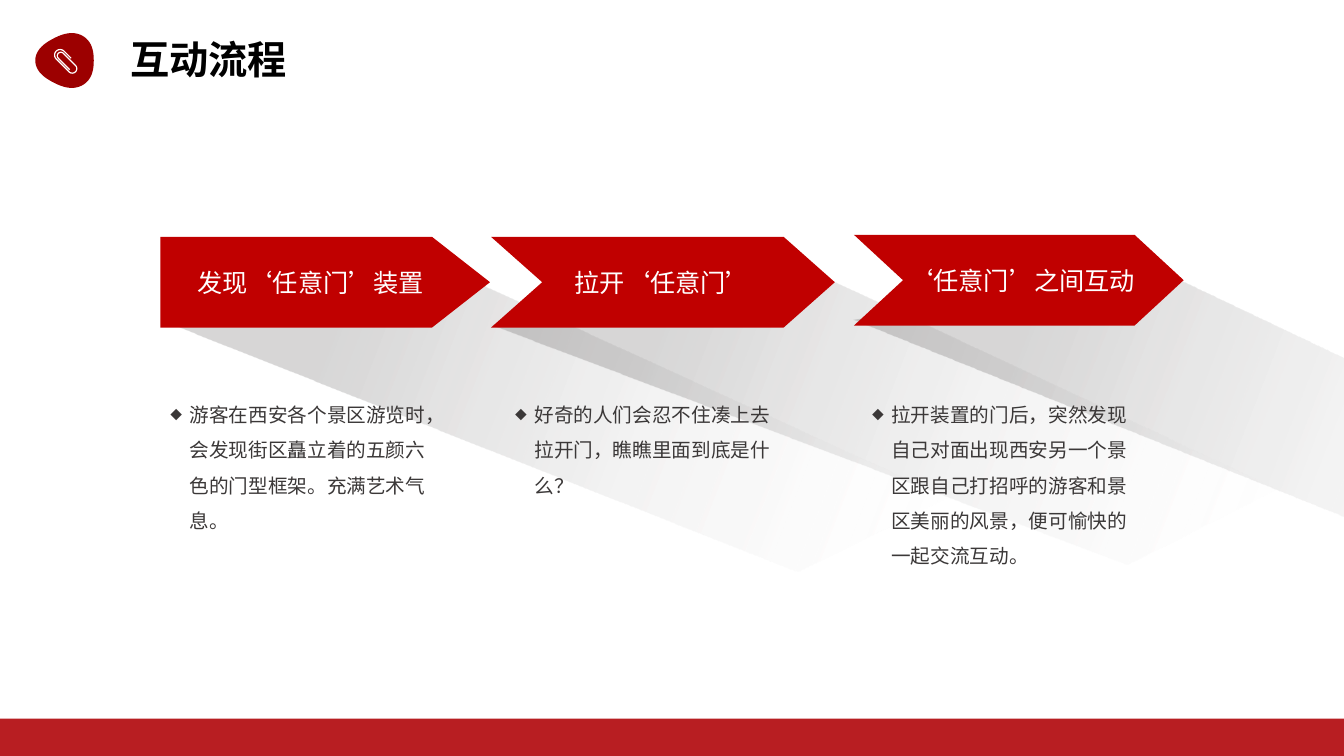
from math import cos, pi, radians, sin, sqrt
from lxml.etree import SubElement
from pptx import Presentation
from pptx.dml.color import RGBColor
from pptx.enum.shapes import MSO_SHAPE as Kind
from pptx.enum.text import MSO_ANCHOR as Anchor, MSO_AUTO_SIZE as Fit, PP_ALIGN as Align
from pptx.oxml.ns import qn
from pptx.util import Inches, Pt

FONT = "Noto Sans CJK SC"
RED, DARK, PALE, WHITE = "C00000", "3B3838", "F2F2F2", "FFFFFF"
rgb = RGBColor.from_string


def paint(shape, tone):
    shape.shadow.inherit = False
    shape.line.fill.background()
    shape.fill.solid()
    shape.fill.fore_color.rgb = rgb(tone)


def write(frame, text, size, tone, align, anchor):
    frame.text = text
    frame.vertical_anchor = anchor
    para = frame.paragraphs[0]
    para.alignment = align
    run = para.runs[0]
    run.font.size = Pt(size)
    run.font.bold = False
    run.font.color.rgb = rgb(tone)
    run.font.name = FONT
    SubElement(run._r.get_or_add_rPr(), qn("a:ea"), typeface=FONT)


deck = Presentation()
deck.slide_width = Inches(13.33)
deck.slide_height = Inches(7.5)
slide = deck.slides.add_slide(deck.slide_layouts[4])
shapes = slide.shapes
title, *bodies, spare = list(slide.placeholders)
spare._element.getparent().remove(spare._element)

bar = shapes.add_shape(Kind.RECTANGLE, 0, Inches(7.13), deck.slide_width, Inches(0.37))
paint(bar, "B81E22")

title.left, title.top = Inches(1.19), Inches(0.3)
title.width, title.height = Inches(3.35), Inches(0.57)
write(title.text_frame, "互动流程", 28, "000000", Align.LEFT, Anchor.MIDDLE)
title.text_frame.paragraphs[0].runs[0].font.bold = True
title.text_frame.auto_size = Fit.NONE

blob = []
for step in range(72):
    turn = 2 * pi * step / 72
    radius = 0.29 - 0.02 * cos(3 * turn)
    blob.append((0.66 + radius * cos(turn), 0.6 + 0.92 * radius * sin(turn)))

bends = [(-0.075, 0, 0.055), (0.105, -0.01, 0.045), (-0.065, 0, 0.035)]
wire = [(0.025, 0, 0.055, pi / 2)]
for count, (along, across, radius) in enumerate(bends):
    for step in range(13):
        wire.append((along, across, radius, pi / 2 + pi * (count + step / 12)))
wire.append((0.095, 0, 0.035, 3 * pi / 2))

clip = []
for half, side in [(0.006, wire), (-0.006, wire[::-1])]:
    for along, across, radius, turn in side:
        u = along + (radius + half) * cos(turn)
        v = across + (radius + half) * sin(turn)
        clip.append((0.65 + (u + v) / sqrt(2), 0.6 + (u - v) / sqrt(2)))

badge = shapes.add_group_shape()
for outline, tone in [(blob, "9C0000"), (clip, WHITE)]:
    first, *rest = [(Inches(x), Inches(y)) for x, y in outline]
    pen = badge.shapes.build_freeform(*first)
    pen.add_line_segments(rest, close=True)
    paint(pen.convert_to_shape(), tone)

TURN = 291.2
c, s = cos(radians(TURN)), sin(radians(TURN))
stops = [(0.24, DARK, 20000), (1, PALE, 0)]
shades = [
    ((5.55, 3.94), (4.81, 2.84), (9.4, 4.93), (7.91, 5.67), (1.61, 3.18)),
    ((8.83, 3.89), (8.2, 2.77), (12.67, 4.85), (11.18, 5.6), (4.87, 3.23)),
    ((12.48, 3.94), (11.68, 2.77), (16.37, 5), (14.87, 5.75), (8.48, 3.18)),
]
for (mid, base), *corners in shades:
    flat = []
    for x, y in corners:
        dx, dy = x - mid, y - base
        flat.append((Inches(mid + dx * c + dy * s), Inches(base - dx * s + dy * c)))
    pen = shapes.build_freeform(*flat[0])
    pen.add_line_segments(flat[1:], close=True)
    shade = pen.convert_to_shape()
    paint(shade, PALE)
    shade.rotation = TURN
    shade.fill.gradient()
    shade.fill.gradient_angle = 270
    for stop, (place, tone, alpha) in zip(shade.fill.gradient_stops, stops):
        stop.position = place
        stop.color.rgb = rgb(tone)
    for node, (place, tone, alpha) in zip(shade._element.iter(qn("a:srgbClr")), stops):
        SubElement(node, qn("a:alpha"), val=str(alpha))

arrows = [
    (Kind.CHEVRON, 8.47, 2.33, 3.27, 0.541, " ‘任意门’之间互动"),
    (Kind.CHEVRON, 4.87, 2.35, 3.41, 0.564, "拉开‘任意门’"),
    (Kind.PENTAGON, 1.59, 2.35, 3.27, 0.639, "发现‘任意门’装置"),
]
for kind, left, top, width, point, text in arrows:
    arrow = shapes.add_shape(kind, Inches(left), Inches(top), Inches(width), Inches(0.9))
    arrow.adjustments[0] = point
    paint(arrow, RED)
    write(arrow.text_frame, text, 18, WHITE, Align.CENTER, Anchor.MIDDLE)
    arrow.text_frame.word_wrap = False

notes = [
    (1.59, 1.51, "游客在西安各个景区游览时，会发现街区矗立着的五颜六色的门型框架。充满艺术气息。"),
    (5.01, 1.16, "好奇的人们会忍不住凑上去拉开门，瞧瞧里面到底是什么？"),
    (8.55, 1.87, "拉开装置的门后，突然发现自己对面出现西安另一个景区跟自己打招呼的游客和景区美丽的风景，便可愉快的一起交流互动。"),
]
for body, (left, height, text) in zip(bodies, notes):
    body.left, body.top = Inches(left), Inches(3.83)
    body.width, body.height = Inches(2.9), Inches(height)
    frame = body.text_frame
    write(frame, text, 14, DARK, Align.LEFT, Anchor.TOP)
    frame.word_wrap = True
    frame.auto_size = Fit.SHAPE_TO_FIT_TEXT
    para = frame.paragraphs[0]
    para.line_spacing = 1.5
    para.space_before = para.space_after = Pt(0)
    props = para._p.get_or_add_pPr()
    props.set("marL", str(Inches(0.19)))
    props.set("indent", str(-Inches(0.19)))
    SubElement(props, qn("a:buSzPct"), val="60000")
    SubElement(props, qn("a:buFont"), typeface=FONT)
    SubElement(props, qn("a:buChar"), char="◆")
    shapes._spTree.append(body._element)

deck.save("out.pptx")
